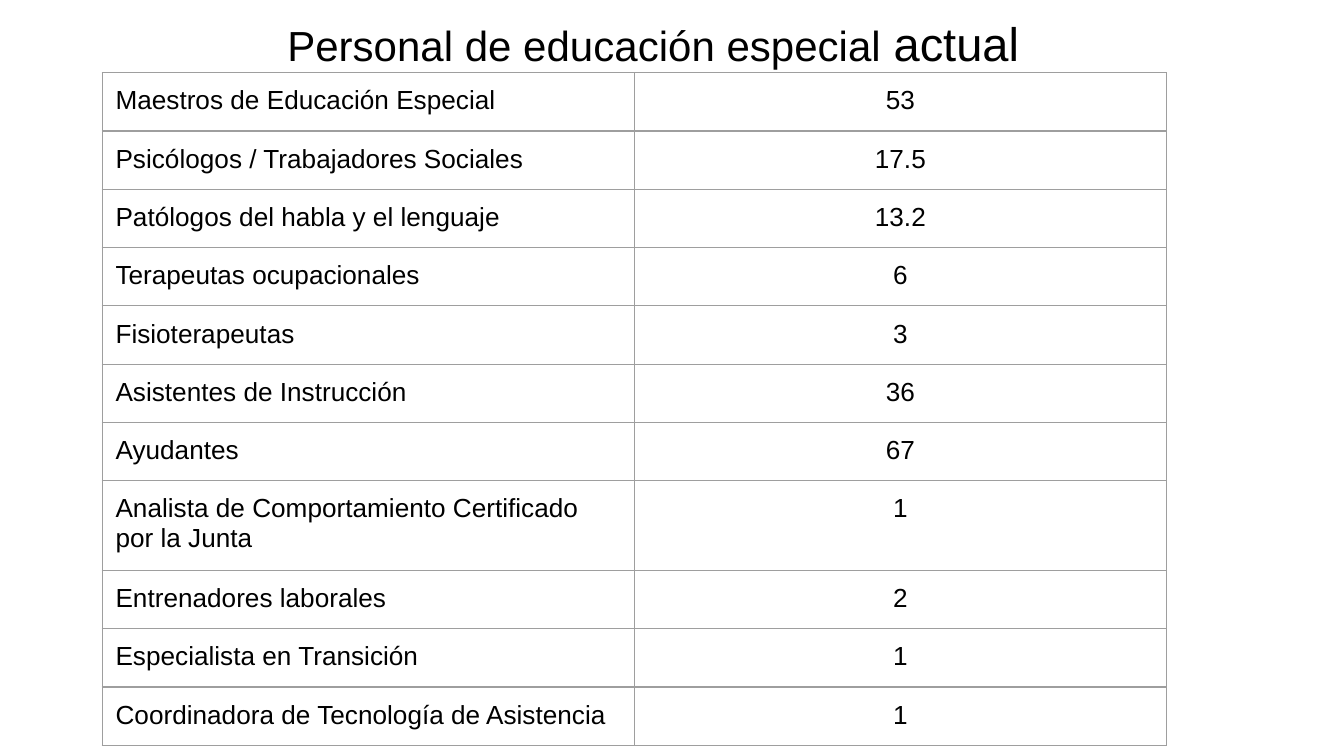
from lxml.etree import SubElement
from pptx import Presentation
from pptx.dml.color import RGBColor
from pptx.enum.text import MSO_ANCHOR, PP_ALIGN
from pptx.oxml.ns import qn
from pptx.util import Inches, Pt

FONT = "Arial"
BLACK = RGBColor(0x00, 0x00, 0x00)
BORDER_GRAY = RGBColor(0x9E, 0x9E, 0x9E)
INSET = Inches(0.1)

TITLE = [("Personal de educación especial ", 22.5), ("actual", 25.2)]
STAFF = [
    ("Maestros de Educación Especial", "53"),
    ("Psicólogos / Trabajadores Sociales", "17.5"),
    ("Patólogos del habla y el lenguaje", "13.2"),
    ("Terapeutas ocupacionales", "6"),
    ("Fisioterapeutas", "3"),
    ("Asistentes de Instrucción", "36"),
    ("Ayudantes", "67"),
    ("Analista de Comportamiento Certificado por la Junta", "1"),
    ("Entrenadores laborales", "2"),
    ("Especialista en Transición", "1"),
    ("Coordinadora de Tecnología de Asistencia", "1"),
]


def style_run(run, size):
    run.font.name = FONT
    run.font.size = Pt(size)
    run.font.color.rgb = BLACK
    for script in ("a:ea", "a:cs"):
        SubElement(run.font._element, qn(script), typeface=FONT)


def style_paragraph(paragraph, alignment):
    paragraph.alignment = alignment
    paragraph.line_spacing = 1.0
    paragraph.space_before = paragraph.space_after = Pt(0)


def set_margins(container):
    container.margin_left = container.margin_right = INSET
    container.margin_top = container.margin_bottom = INSET


def add_title(slide):
    title = slide.shapes.add_textbox(Inches(0.2), 0, Inches(9.32), Inches(0.63))
    frame = title.text_frame
    frame.word_wrap = True
    frame.vertical_anchor = MSO_ANCHOR.BOTTOM
    set_margins(frame)
    heading = frame.paragraphs[0]
    style_paragraph(heading, PP_ALIGN.CENTER)
    for words, size in TITLE:
        run = heading.add_run()
        run.text = words
        style_run(run, size)


def add_borders(cell):
    properties = cell._tc.get_or_add_tcPr()
    for position, side in enumerate(("a:lnL", "a:lnR", "a:lnT", "a:lnB")):
        border = properties.makeelement(qn(side), {"w": str(Pt(0.75))})
        fill = SubElement(border, qn("a:solidFill"))
        SubElement(fill, qn("a:srgbClr"), val=str(BORDER_GRAY))
        properties.insert(position, border)


def fill_cell(cell, words, alignment):
    cell.text_frame.text = words
    cell.vertical_anchor = MSO_ANCHOR.TOP
    set_margins(cell)
    cell.fill.background()
    add_borders(cell)
    paragraph = cell.text_frame.paragraphs[0]
    style_paragraph(paragraph, alignment)
    style_run(paragraph.runs[0], 14)


def add_staff_table(slide):
    """Add the staff counts; rows grow to fit their text."""
    row_height = Inches(0.29)
    table = slide.shapes.add_table(
        len(STAFF), 2, Inches(0.76), Inches(0.54),
        Inches(7.92), row_height * len(STAFF)).table
    table.first_row = False
    table.horz_banding = False
    for row, (role, count) in zip(table.rows, STAFF):
        row.height = row_height
        fill_cell(row.cells[0], role, PP_ALIGN.LEFT)
        fill_cell(row.cells[1], count, PP_ALIGN.CENTER)


def main():
    presentation = Presentation()
    presentation.slide_width = Inches(10)
    presentation.slide_height = presentation.slide_width * 9 // 16
    slide = presentation.slides.add_slide(presentation.slide_layouts[6])
    add_title(slide)
    add_staff_table(slide)
    presentation.save("out.pptx")


if __name__ == "__main__":
    main()
